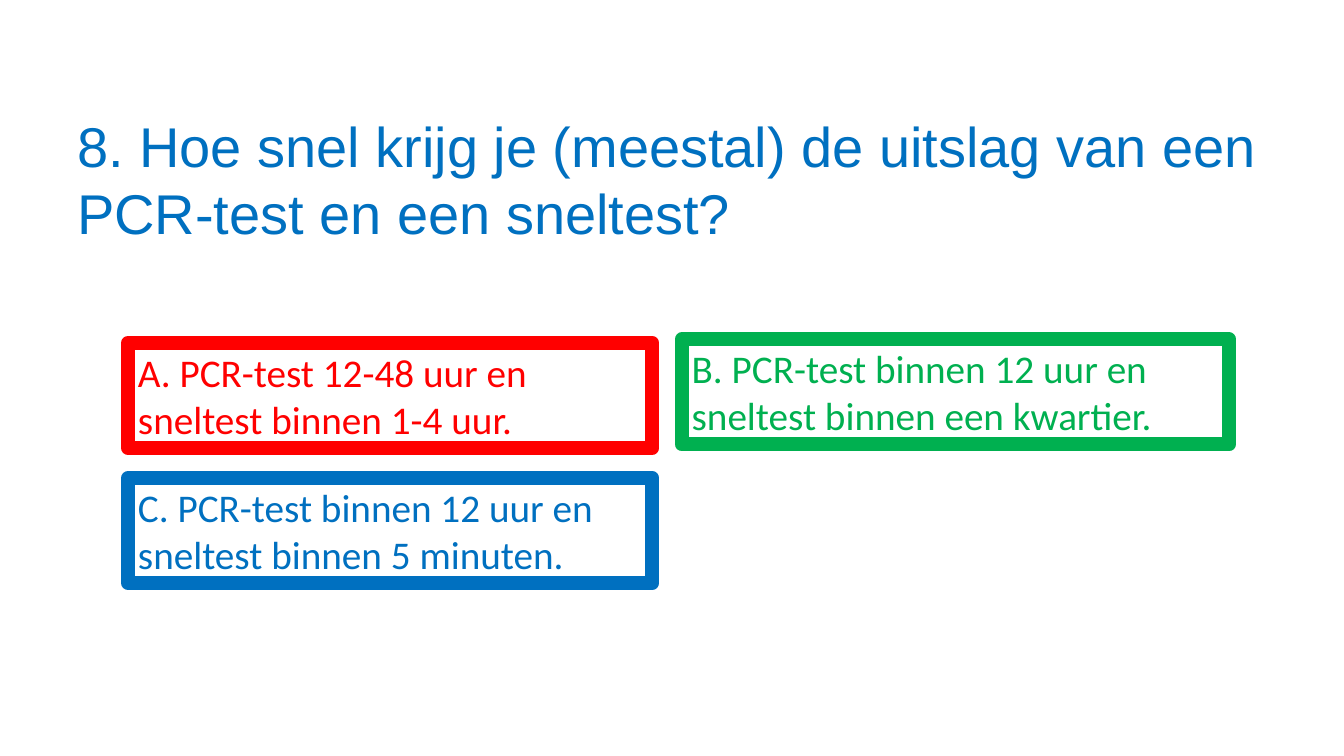
from pptx import Presentation
from pptx.dml.color import RGBColor
from pptx.enum import text
from pptx.util import Pt

COLORS = {"red": "FF0000", "green": "00B050", "blue": "0070C0"}

deck = Presentation()
deck.slide_width, deck.slide_height = Pt(960), Pt(540)
slide = deck.slides.add_slide(deck.slide_layouts[6])


def add_text(words, left, top, width, height, font_name, size, color):
    box = slide.shapes.add_textbox(Pt(left), Pt(top), Pt(width), Pt(height))
    box.text_frame.word_wrap = True
    box.text_frame.text = words
    font = box.text_frame.paragraphs[0].runs[0].font
    font.name, font.size = font_name, Pt(size)
    font.color.rgb = RGBColor.from_string(COLORS[color])
    return box


# Question
question = add_text(
    "8. Hoe snel krijg je (meestal) de uitslag van een PCR-test en een sneltest?",
    48, 75.6, 896.4, 104.4, "Arial", 40, "blue")
question.text_frame.vertical_anchor = text.MSO_ANCHOR.MIDDLE
question.text_frame.paragraphs[0].line_spacing = Pt(48)

# Answers, each framed in the colour of its text
answers = [
    ("A. PCR-test 12-48 uur en sneltest binnen 1-4 uur.", 91.5, 245, 374.5, "red"),
    ("C. PCR-test binnen 12 uur en sneltest binnen 5 minuten.", 91.5, 341.5, 374.5, "blue"),
    ("B. PCR-test binnen 12 uur en sneltest binnen een kwartier.", 487, 242.5, 391, "green"),
]
for words, left, top, width, color in answers:
    answer = add_text(words, left, top, width, 75, "Calibri", 28, color)
    answer.text_frame.auto_size = text.MSO_AUTO_SIZE.SHAPE_TO_FIT_TEXT
    answer.line.width = Pt(10)
    answer.line.color.rgb = RGBColor.from_string(COLORS[color])

deck.save("out.pptx")
